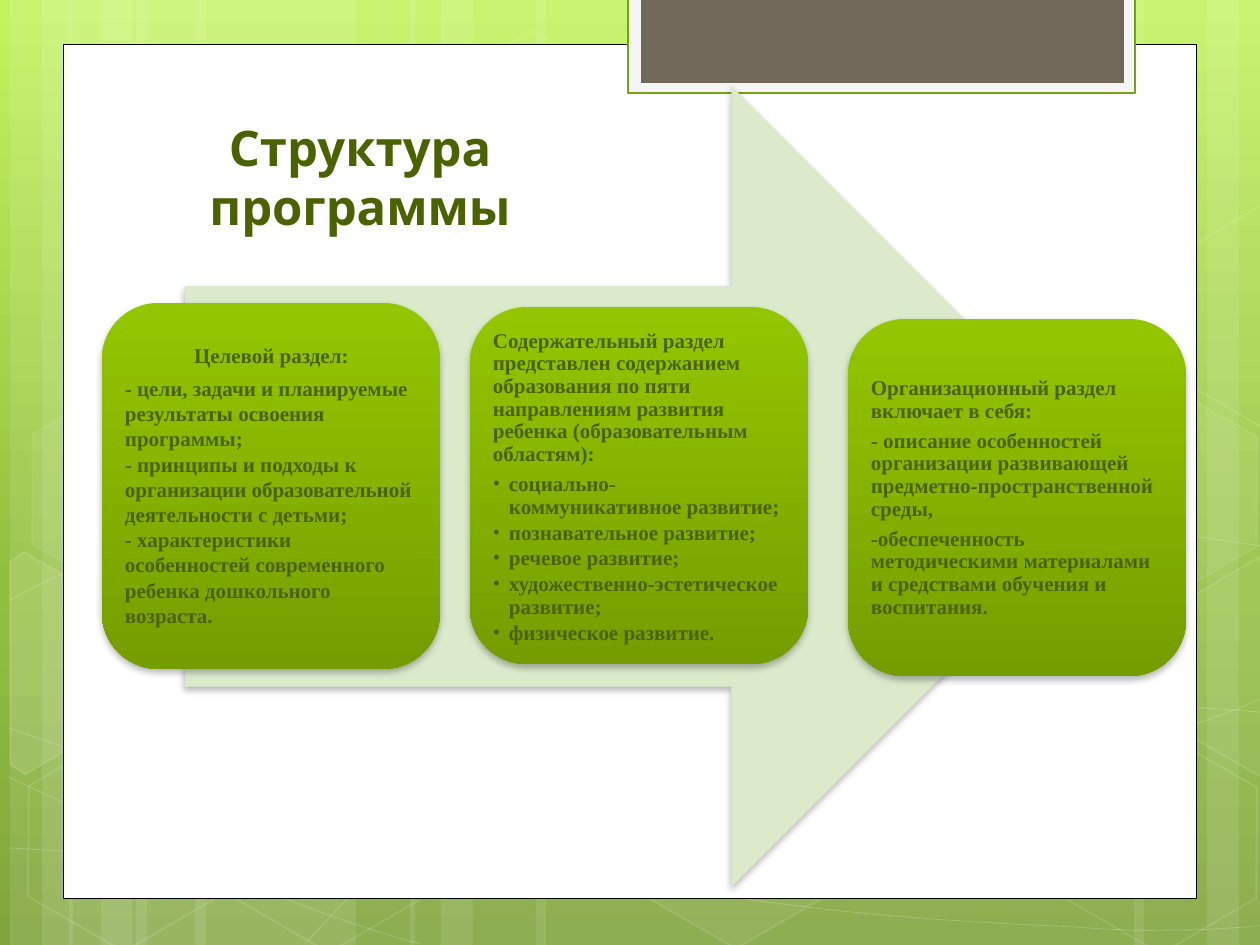
from copy import deepcopy
from math import cos, radians, sin
from lxml.etree import SubElement
from pptx import Presentation
from pptx.dml.color import RGBColor
from pptx.enum.shapes import MSO_SHAPE
from pptx.enum.text import MSO_ANCHOR, PP_ALIGN
from pptx.oxml.ns import qn
from pptx.util import Pt

SCALE = 914400 / 126
TILT = 30
WHITE = RGBColor(0xFF, 0xFF, 0xFF)
BLACK = RGBColor(0, 0, 0)
LIME = RGBColor(0xC3, 0xF3, 0x5F)
GRASS = RGBColor(0x93, 0xBF, 0x3F)
MOSS = RGBColor(0x81, 0xA5, 0x3E)
LEAF = RGBColor(0x94, 0xC6, 0x00)
FERN = RGBColor(0x76, 0x9D, 0x00)
DARK = RGBColor(0x4A, 0x63, 0x00)
PALE = RGBColor(0xDC, 0xEA, 0xCC)
MIST = RGBColor(0xF5, 0xF5, 0xF5)
EDGE = RGBColor(0x74, 0xA5, 0x10)
TAUPE = RGBColor(0x71, 0x68, 0x5A)

BANDS = [(136, 220), (10, 63), (42, 105), (195, 220), (69, 63), (101, 105),
         (924, 220), (1207, 63), (1134, 105), (536, 388), (410, 63), (441, 105)]
CURVES = [
    [(9, 848), (77, 852), (145, 856), (239, 854), (334, 853), (451, 851), (577, 838),
     (703, 825), (882, 801), (998, 777), (1113, 753), (1231, 716), (1269, 694)],
    [(9, 601), (45, 581), (82, 562), (152, 543), (224, 524), (326, 496), (437, 488),
     (549, 479), (685, 478), (824, 488), (963, 498), (1193, 537), (1269, 547)],
    [(8, 777), (160, 847), (311, 916), (421, 944)],
    [(9, 728), (48, 742), (88, 756), (161, 776), (234, 795), (344, 827), (450, 848),
     (554, 869), (687, 892), (791, 905), (896, 919), (1008, 924), (1075, 927),
     (1140, 932), (1158, 930), (1191, 930), (1223, 929), (1246, 927), (1269, 925)],
    [(305, 944), (328, 919), (350, 893), (381, 871), (411, 848), (454, 823), (489, 805),
     (524, 788), (546, 780), (592, 767), (638, 755), (722, 737), (766, 728),
     (811, 721), (818, 721), (857, 717), (896, 713), (958, 709), (1000, 708),
     (1045, 707), (1116, 708), (1116, 708), (1144, 708), (1173, 708), (1201, 708),
     (1223, 709), (1245, 711), (1268, 713)],
]
HEXES = [(421, 45, 4, 8), (626, 742, 6, 12), (14, 745, 0, 12), (18, 393, 7, 8),
         (219, 746, 0, 12), (949, 571, 10, 12), (1051, 747, 0, 12), (1051, 396, 7, 8)]
CELLS = [
    ((45, 674), 10, [(10, 561), (24, 552), (121, 607), (120, 718), (25, 774), (10, 765)]),
    ((1241, 655), 4, [(1167, 611), (1261, 556), (1271, 562), (1271, 772), (1263, 777),
                      (1167, 722)]),
    ((1241, 304), 0, [(1167, 261), (1261, 205), (1273, 212), (1271, 422), (1263, 427),
                      (1167, 372)]),
]

HEAD, ITEM, PLAIN = "head", "item", "plain"
CARDS = [
    ((102, 303, 338, 366), MSO_ANCHOR.MIDDLE, PP_ALIGN.CENTER, [
        (HEAD, "Целевой раздел:"),
        (PLAIN, "- цели, задачи и планируемые результаты освоения программы;"),
        (PLAIN, "- принципы и подходы к организации образовательной деятельности с детьми;"),
        (PLAIN, "- характеристики особенностей современного ребенка дошкольного возраста.")]),
    ((470, 307, 338, 357), MSO_ANCHOR.TOP, PP_ALIGN.LEFT, [
        (HEAD, "Содержательный раздел представлен содержанием образования по пяти "
               "направлениям развития ребенка (образовательным областям):"),
        (ITEM, "социально-коммуникативное развитие;"),
        (ITEM, "познавательное развитие;"),
        (ITEM, "речевое развитие;"),
        (ITEM, "художественно-эстетическое развитие;"),
        (ITEM, "физическое развитие.")]),
    ((848, 319, 338, 357), MSO_ANCHOR.MIDDLE, PP_ALIGN.LEFT, [
        (HEAD, "Организационный раздел включает в себя:"),
        (HEAD, "- описание особенностей организации развивающей "
               "предметно-пространственной среды,"),
        (HEAD, "-обеспеченность методическими материалами и средствами обучения "
               "и воспитания.")]),
]


def px(num):
    """Turn px into EMU."""
    return round(num * SCALE)


def fade(fill, alpha):
    """Set the opacity, in percent, of a solid fill element."""
    SubElement(fill[0], qn("a:alpha"), val=str(alpha * 1000))


def paint(shape, fill=None, line=None, width=1, glass=None, haze=None):
    """Style a shape with fill, line and their opacities."""
    shape.shadow.inherit = False
    props = shape.element.spPr
    if fill is None:
        shape.fill.background()
    else:
        shape.fill.solid()
        shape.fill.fore_color.rgb = fill
        if glass:
            fade(props.find(qn("a:solidFill")), glass)
    if line is None:
        shape.line.fill.background()
    else:
        shape.line.color.rgb = line
        shape.line.width = Pt(width)
        if haze:
            fade(props.find(qn("a:ln")).find(qn("a:solidFill")), haze)


def blend(fill, first, last):
    """Fill with a gradient that runs from top to bottom."""
    fill.gradient()
    fill.gradient_angle = 270
    for stop, color, place in zip(fill.gradient_stops, (first, last), (0, 1)):
        stop.color.rgb = color
        stop.position = place


def shade(shape):
    """Add a soft shadow below a shape."""
    glow = SubElement(shape.element.spPr.find(qn("a:effectLst")), qn("a:outerShdw"),
                      blurRad=str(Pt(4)), dist=str(Pt(2)), dir="5400000", rotWithShape="0")
    color = SubElement(glow, qn("a:srgbClr"), val=str(BLACK))
    SubElement(color, qn("a:alpha"), val="28000")


def block(slide, kind, box):
    """Add a preset shape in a px box."""
    return slide.shapes.add_shape(kind, *map(px, box))


def outline(slide, dots, close):
    """Add a freeform through px points."""
    pen = slide.shapes.build_freeform(*dots[0], scale=SCALE)
    pen.add_line_segments(dots[1:], close=close)
    return pen.convert_to_shape()


def curve(slide, knots):
    """Add an open chain of cubic curves."""
    shape = outline(slide, knots, False)
    lines = list(shape.element.iter(qn("a:lnTo")))
    trail = lines[0].getparent()
    for i in range(0, len(lines), 3):
        bend = SubElement(trail, qn("a:cubicBezTo"))
        for line in lines[i:i + 3]:
            bend.append(line[0])
            trail.remove(line)
    return shape


def turn(dot, hub):
    """Rotate a point about a hub, against the tilt."""
    dx, dy = dot[0] - hub[0], dot[1] - hub[1]
    c, s = cos(radians(TILT)), sin(radians(TILT))
    return hub[0] + c * dx + s * dy, hub[1] - s * dx + c * dy


def backdrop(slide, box):
    """Draw the green ground with its bands, curves and hexagons."""
    left, top, _, high = box
    blend(slide.background.fill, LIME, MOSS)
    stops = slide.element.find(".//" + qn("a:gsLst"))
    stops.insert(1, deepcopy(stops[0]))
    middle = slide.background.fill.gradient_stops[1]
    middle.color.rgb = GRASS
    middle.position = 0.62
    for x, wide in BANDS:
        paint(block(slide, MSO_SHAPE.RECTANGLE, (left + x, top, wide, high)), WHITE, glass=10)
    for knots in CURVES:
        line = curve(slide, [(left + x, top + y) for x, y in knots])
        paint(line, None, WHITE, 0.5, haze=20)
    for x, y, glass, haze in HEXES:
        hexagon = block(slide, MSO_SHAPE.HEXAGON, (left + x, top + y, 220, 192))
        hexagon.adjustments[0] = 0.285
        hexagon.rotation = TILT
        paint(hexagon, WHITE if glass else None, WHITE, 1, glass, haze)
    for hub, glass, dots in CELLS:
        spots = [turn(dot, hub) for dot in dots]
        cell = outline(slide, [(left + x, top + y) for x, y in spots], True)
        cell.rotation = TILT
        paint(cell, WHITE if glass else None, WHITE, 1, glass, 12)


def sheet(slide, box):
    """Draw the white sheet and the tab at its top."""
    left, top, _, _ = box
    paint(block(slide, MSO_SHAPE.RECTANGLE, box), WHITE, BLACK, 0.5)
    paint(block(slide, MSO_SHAPE.RECTANGLE, (left + 565, top - 47, 507, 95)), MIST, EDGE, 1.25)
    paint(block(slide, MSO_SHAPE.RECTANGLE, (left + 578, top - 47, 483, 85)), TAUPE)


def write(para, text, name, size):
    """Put bold dark text in a paragraph."""
    para.text = text
    font = para.font
    font.name, font.size, font.bold = name, Pt(size), True
    font.color.rgb = DARK


def card(slide, box, anchor, align, rows):
    """Draw one section card with its text."""
    left, top, wide, high = box
    panel = block(slide, MSO_SHAPE.ROUNDED_RECTANGLE, box)
    paint(panel)
    blend(panel.fill, LEAF, FERN)
    shade(panel)
    area = (left + 17, top + 17, wide - 33, high - 33)
    frame = slide.shapes.add_textbox(*map(px, area)).text_frame
    frame.word_wrap = True
    frame.vertical_anchor = anchor
    frame.margin_left = frame.margin_right = frame.margin_top = frame.margin_bottom = px(6)
    for i, (kind, text) in enumerate(rows):
        para = frame.add_paragraph() if i else frame.paragraphs[0]
        write(para, text, "Times New Roman", 12)
        para.alignment = align if kind == HEAD else PP_ALIGN.LEFT
        if kind != PLAIN:
            para.line_spacing = 0.9
            para.space_after = Pt(4.2 if kind == HEAD else 1.8)
        if kind == ITEM:
            para.level = 1
            props = para._p.get_or_add_pPr()
            props.set("marL", str(px(16)))
            props.set("indent", str(px(-16)))
            face = SubElement(props, qn("a:buFont"), typeface="Times New Roman")
            mark = SubElement(props, qn("a:buChar"), char="•")
            for part in (face, mark):
                props.find(qn("a:defRPr")).addprevious(part)


def title(slide, box):
    """Write the slide title."""
    frame = slide.shapes.add_textbox(*map(px, box)).text_frame
    frame.word_wrap = True
    para = frame.paragraphs[0]
    write(para, "Структура программы", "Quicksand", 28)
    para.alignment = PP_ALIGN.CENTER


def main():
    """Build and save the slide."""
    deck = Presentation()
    deck.slide_width, deck.slide_height = px(1260), px(945)
    slide = deck.slides.add_slide(deck.slide_layouts[6])
    backdrop(slide, (0, 0, 1260, 945))
    sheet(slide, (63, 45, 1134, 854))
    arrow = block(slide, MSO_SHAPE.RIGHT_ARROW, (185, 86, 947, 801))
    paint(arrow, PALE)
    shade(arrow)
    for parts in CARDS:
        card(slide, *parts)
    title(slide, (70, 111, 580, 131))
    deck.save("out.pptx")


if __name__ == "__main__":
    main()
